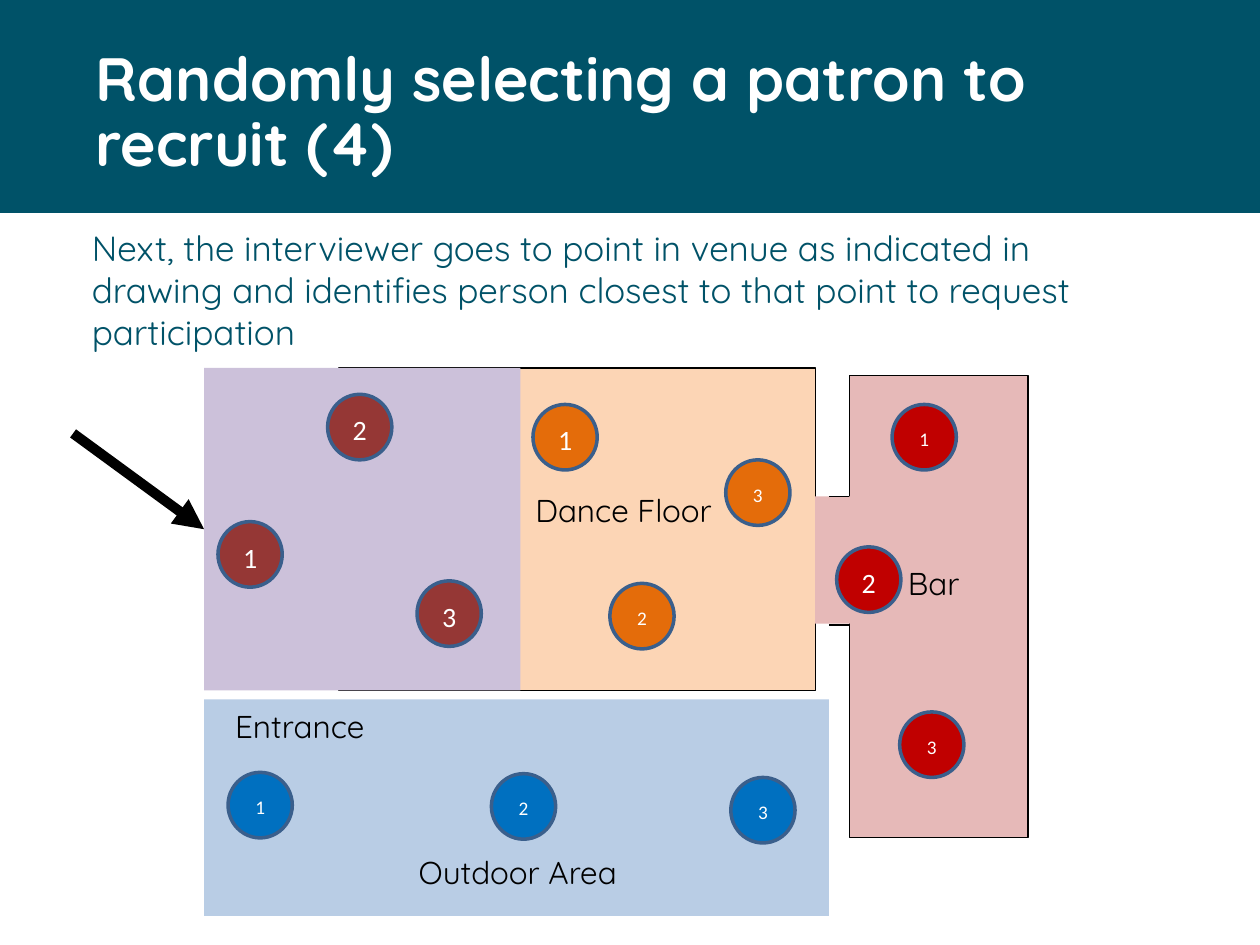
from lxml.etree import SubElement
from pptx import Presentation
from pptx.dml.color import RGBColor
from pptx.enum.shapes import MSO_CONNECTOR as Connector, MSO_SHAPE as Shape
from pptx.enum.text import MSO_ANCHOR as Anchor, PP_ALIGN as Align
from pptx.oxml.ns import qn
from pptx.util import Inches, Pt

COLORS = {
    "teal": "005268", "white": "FFFFFF", "black": "000000", "ring": "3A5F8C",
    "bar": "E6B9B8", "dance": "FCD5B5", "outdoor": "B9CDE5", "lounge": "CCC1DA",
    "blue": "0070C0", "maroon": "953735", "orange": "E46C0A", "red": "C00000",
}
TITLE = "Randomly selecting a patron to recruit (4)"
INSTRUCTION = ("Next, the interviewer goes to point in venue as indicated in drawing "
               "and identifies person closest to that point to request participation")

# Rooms: left, top, width, height, fill, outline
ROOMS = [
    (6.74, 2.98, 1.42, 3.67, "bar", "black"),
    (2.69, 2.92, 3.78, 2.56, "dance", "black"),
    (6.47, 3.94, 0.38, 1.01, "bar", None),
    (1.62, 5.55, 4.96, 1.72, "outdoor", None),
]
LOUNGE = (1.62, 2.92, 2.51, 2.56, "lounge", None)
LABELS = [
    ("Outdoor Area", 2.66, 6.72, 2.9),
    ("Bar", 6.75, 4.43, 1.32),
    ("Dance Floor", 3.5, 3.85, 2.9),
    ("Entrance", 1.66, 5.56, 1.44),
]
DOORWAY_EDGES = [3.94, 4.96]

# Numbered points per area: left, top, text size
POINT_SIZE = (0.51, 0.52)
POINTS = {
    "blue": [(1.81, 6.13, 11), (3.9, 6.14, 11), (5.8, 6.17, 11)],
    "maroon": [(1.73, 4.14, 16), (2.6, 3.13, 16), (3.31, 4.61, 16)],
    "orange": [(4.23, 3.21, 16), (4.84, 4.63, 11), (5.76, 3.65, 11)],
    "red": [(7.08, 3.21, 11), (6.64, 4.34, 16), (7.14, 5.65, 11)],
}

deck = Presentation()
deck.slide_width, deck.slide_height = Inches(10), Inches(7.5)
page = deck.slides.add_slide(deck.slide_layouts[6])


def rgb(name):
    return RGBColor.from_string(COLORS[name])


def write(box, text, size, color="black", font="Quicksand", bold=False,
          align=Align.CENTER, anchor=Anchor.TOP, spacing=None):
    frame = box.text_frame
    frame.word_wrap = True
    frame.vertical_anchor = anchor
    para = frame.paragraphs[0]
    para.alignment = align
    para.line_spacing = spacing
    span = para.add_run()
    span.text = text
    span.font.name, span.font.size, span.font.bold = font, Pt(size), bold
    span.font.color.rgb = rgb(color)


def add_text(left, top, width, height, text, size, **style):
    box = page.shapes.add_textbox(*map(Inches, (left, top, width, height)))
    write(box, text, size, **style)


def add_area(left, top, width, height, fill, outline=None, kind=Shape.RECTANGLE, weight=0.75):
    area = page.shapes.add_shape(kind, *map(Inches, (left, top, width, height)))
    area.shadow.inherit = False
    area.fill.solid()
    area.fill.fore_color.rgb = rgb(fill)
    if outline:
        area.line.color.rgb = rgb(outline)
        area.line.width = Pt(weight)
    else:
        area.line.fill.background()
    return area


def add_line(start, end, weight):
    line = page.shapes.add_connector(Connector.STRAIGHT, *map(Inches, (*start, *end)))
    line.line.color.rgb = rgb("black")
    line.line.width = Pt(weight)
    SubElement(line._element.spPr, qn("a:effectLst"))
    return line


# Heading band and instruction
add_area(0, 0, 10, 1.69, "teal")
add_text(0.66, 0.34, 8.62, 1.1, TITLE, 34.9, color="white", bold=True,
         align=Align.LEFT, spacing=Pt(37))
add_text(0.63, 1.75, 8.62, 1.34, INSTRUCTION, 20, color="teal",
         align=Align.LEFT, spacing=Pt(24))

# Floor plan
for room in ROOMS:
    add_area(*room)
for y in DOORWAY_EDGES:
    add_line((6.58, y), (6.74, y), 0.75)
lounge = add_area(*LOUNGE)
for text, left, top, width in LABELS:
    add_text(left, top, width, 0.45, text, 18)

# Numbered points
for color, spots in POINTS.items():
    for number, (left, top, size) in enumerate(spots, 1):
        point = add_area(left, top, *POINT_SIZE, color, "ring", Shape.OVAL, 2)
        write(point, str(number), size, color="white", font="Calibri",
              anchor=Anchor.MIDDLE, spacing=1.15)

# Arrow to the lounge
arrow = add_line((0.58, 3.44), (1.62, 4.2), 5.75)
arrow.end_connect(lounge, 1)
SubElement(arrow.line._get_or_add_ln(), qn("a:tailEnd"), type="triangle")

deck.save("out.pptx")
